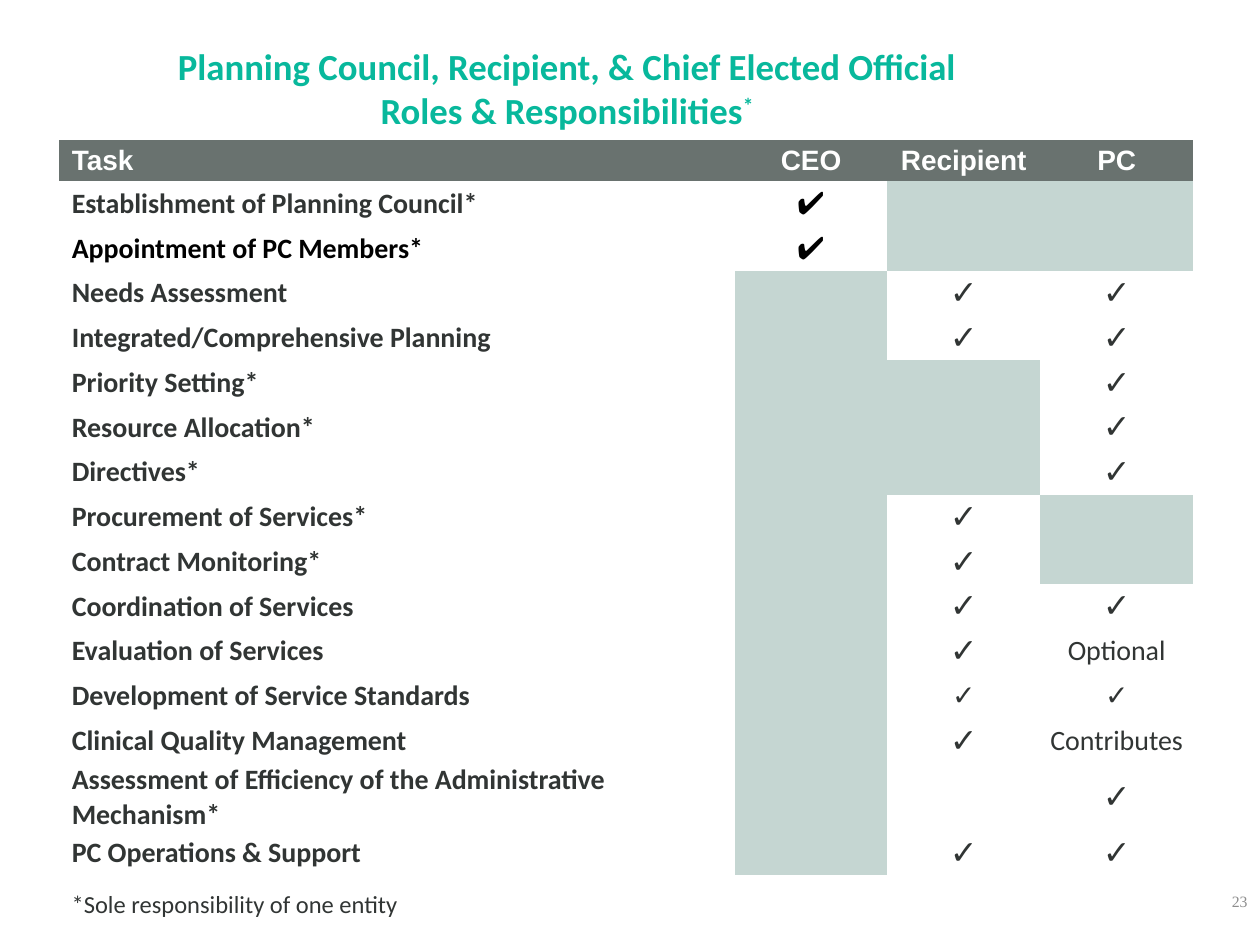
from lxml import etree
from pptx import Presentation
from pptx.dml.color import RGBColor
from pptx.enum.text import MSO_ANCHOR, PP_ALIGN
from pptx.util import Inches, Pt

LEFT, CENTER, RIGHT = PP_ALIGN.LEFT, PP_ALIGN.CENTER, PP_ALIGN.RIGHT
TOP, MIDDLE = MSO_ANCHOR.TOP, MSO_ANCHOR.MIDDLE
TEAL, SLATE, SAGE, INK = "08B89C", "69726F", "C5D6D2", "313534"
WHITE, BLACK, GRAY = "FFFFFF", "000000", "8D8D8D"
NO_GRID_STYLE = "{2D5ABB26-0587-4C30-8999-92F81FD0307C}"
BLANK_LAYOUT = 6
SHADED = None
HEAVY, CHECK = "✔", "✓"

HEADINGS = ("Task", "CEO", "Recipient", "PC")
TASKS = (
    ("Establishment of Planning Council*", HEAVY, SHADED, SHADED),
    ("Appointment of PC Members*", HEAVY, SHADED, SHADED),
    ("Needs Assessment", SHADED, CHECK, CHECK),
    ("Integrated/Comprehensive Planning", SHADED, CHECK, CHECK),
    ("Priority Setting*", SHADED, SHADED, CHECK),
    ("Resource Allocation*", SHADED, SHADED, CHECK),
    ("Directives*", SHADED, SHADED, CHECK),
    ("Procurement of Services*", SHADED, CHECK, SHADED),
    ("Contract Monitoring*", SHADED, CHECK, SHADED),
    ("Coordination of Services", SHADED, CHECK, CHECK),
    ("Evaluation of Services", SHADED, CHECK, "Optional"),
    ("Development of Service Standards", SHADED, CHECK, CHECK),
    ("Clinical Quality Management", SHADED, CHECK, "Contributes"),
    ("Assessment of Efficiency of the Administrative Mechanism*", SHADED, "", CHECK),
    ("PC Operations & Support", SHADED, CHECK, CHECK),
)
BLACK_TASK = "Appointment of PC Members*"
SMALL_CHECK_TASK = "Development of Service Standards"


def color(value):
    """Turn a hex string into a colour."""
    return RGBColor.from_string(value)


def style(para, size, tint, font="Calibri", bold=False, align=LEFT):
    """Set the font and alignment of a paragraph."""
    para.alignment = align
    para.font.size = Pt(size)
    para.font.name = font
    para.font.bold = bold
    para.font.color.rgb = color(tint)


def add_text(page, box, text, anchor=TOP, **look):
    """Place a wrapped text box and return its paragraph."""
    frame = page.shapes.add_textbox(*map(Inches, box)).text_frame
    frame.word_wrap = True
    frame.vertical_anchor = anchor
    para = frame.paragraphs[0]
    para.text = text
    style(para, **look)
    return para


def add_title(page, box):
    """Place the two-line title with its raised asterisk."""
    text = "Planning Council, Recipient, & Chief Elected Official\vRoles & Responsibilities"
    para = add_text(page, box, text, size=21, tint=TEAL, bold=True, align=CENTER)
    span = para.add_run()
    span.text = "*"
    span.font._element.set("baseline", "30000")


def fill_cell(cell, text, fill, indent=0, **look):
    """Fill one table cell with its colour and text."""
    cell.fill.solid()
    cell.fill.fore_color.rgb = color(fill)
    cell.margin_left = Inches(indent)
    cell.margin_top = cell.margin_right = cell.margin_bottom = 0
    cell.vertical_anchor = MIDDLE
    para = cell.text_frame.paragraphs[0]
    if text:
        para.text = text
    style(para, **look)


def mark_look(task, mark):
    """Return the text look of a responsibility mark."""
    if mark == HEAVY:
        return dict(size=18, tint=BLACK, font="Arial")
    if mark == CHECK:
        return dict(size=16 if task == SMALL_CHECK_TASK else 19, tint=INK, bold=True)
    return dict(size=16, tint=INK)


def add_task_table(page, box):
    """Place the table of tasks and responsible entities."""
    left, top, width, height = map(Inches, box)
    task_width, heading_height = Inches(5.36), Inches(0.33)
    table = page.shapes.add_table(
        len(TASKS) + 1, len(HEADINGS), left, top, width, height).table
    table.first_row = table.horz_banding = False
    for element in table._tbl.tblPr:
        if etree.QName(element).localname == "tableStyleId":
            element.text = NO_GRID_STYLE

    for index, column in enumerate(table.columns):
        column.width = task_width if index == 0 else (width - task_width) // 3
    for index, row in enumerate(table.rows):
        row.height = heading_height if index == 0 else (height - heading_height) // len(TASKS)

    for index, heading in enumerate(HEADINGS):
        fill_cell(table.cell(0, index), heading, SLATE, indent=0 if index else 0.1,
                  size=16, tint=WHITE, font="Arial", bold=True,
                  align=CENTER if index else LEFT)
    for row, (task, *marks) in enumerate(TASKS, 1):
        fill_cell(table.cell(row, 0), task, WHITE, indent=0.1, size=16, bold=True,
                  tint=BLACK if task == BLACK_TASK else INK)
        for index, mark in enumerate(marks, 1):
            fill_cell(table.cell(row, index), mark, SAGE if mark is SHADED else WHITE,
                      align=CENTER, **mark_look(task, mark))


def add_footer(page, note_box, number_box):
    """Place the footnote and the page number."""
    add_text(page, note_box, "*Sole responsibility of one entity", size=14, tint=INK)
    add_text(page, number_box, "23", anchor=MIDDLE, size=9, tint=GRAY,
             font="Times New Roman", align=RIGHT)


def main():
    """Build and save the deck."""
    deck = Presentation()
    deck.slide_width, deck.slide_height = Inches(10), Inches(7.5)
    page = deck.slides.add_slide(deck.slide_layouts[BLANK_LAYOUT])
    add_title(page, (0, 0.3, 9, 1.25))
    add_task_table(page, (0.47, 1.11, 9, 5.66))
    add_footer(page, (0.47, 7.01, 9, 0.34), (7.75, 6.95, 2.25, 0.4))
    deck.save("out.pptx")


if __name__ == "__main__":
    main()
